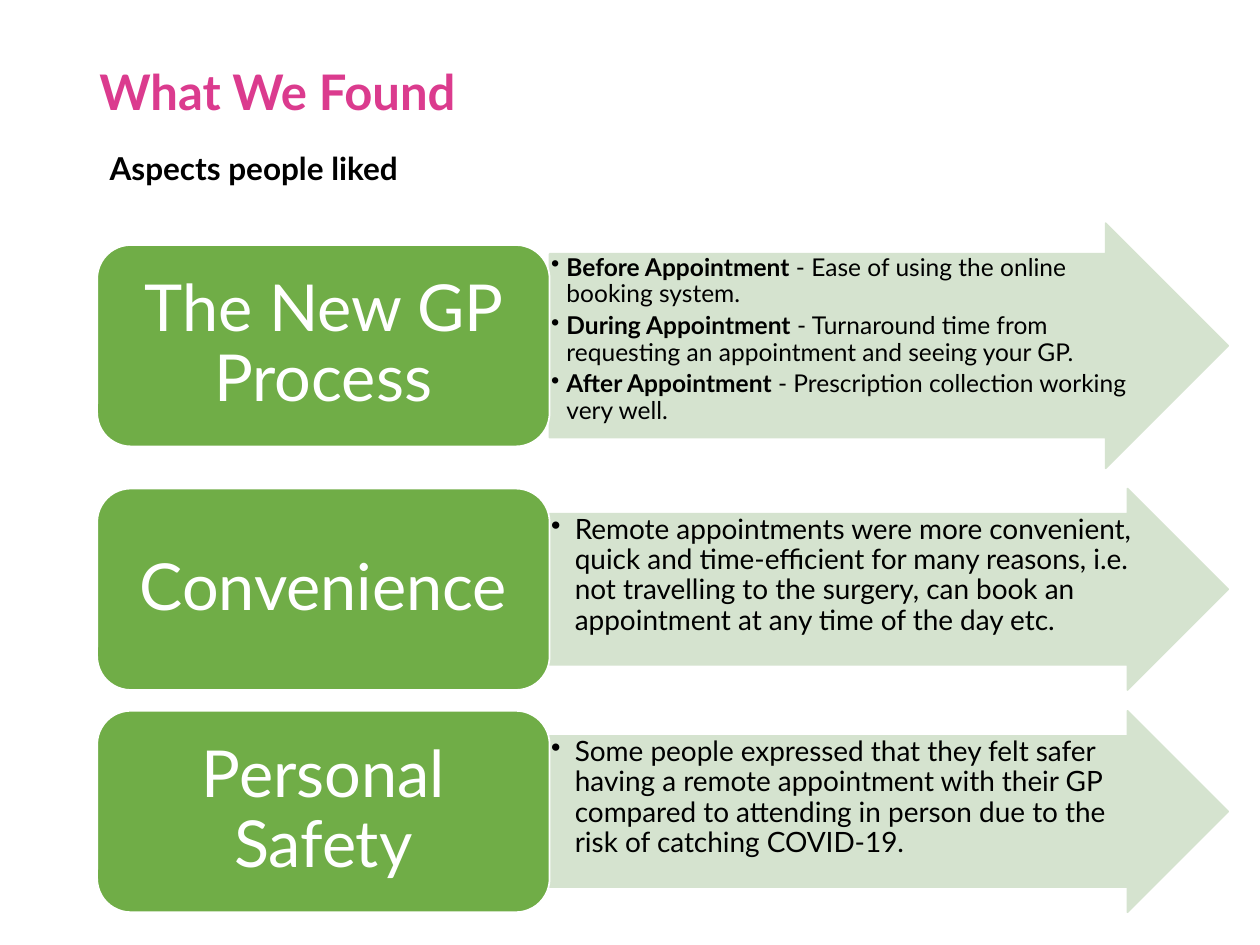
import pptx
import pptx.dml.color
import pptx.enum.shapes
import pptx.enum.text
import pptx.oxml.ns
import pptx.util
from dataclasses import dataclass
from lxml import etree

Cm = pptx.util.Cm
Pt = pptx.util.Pt
SHAPES = pptx.enum.shapes.MSO_SHAPE
ANCHOR = pptx.enum.text.MSO_ANCHOR
ALIGN = pptx.enum.text.PP_ALIGN


@dataclass(frozen=True)
class Theme:
    font: str = "Lato"
    pink: str = "DB3B8E"
    green: str = "70AD47"
    pale: str = "D5E3CF"
    white: str = "FFFFFF"
    black: str = "000000"
    title: int = 28
    subtitle: int = 18
    label: int = 37


theme = Theme()


def style(paragraph, size, color, bold=False):
    paragraph.font.name = theme.font
    paragraph.font.size = Pt(size)
    paragraph.font.bold = bold
    paragraph.font.color.rgb = pptx.dml.color.RGBColor.from_string(color)


def add_block(kind, left, top, width, height, fill, line):
    """Add a filled, outlined shape without shadow and return it."""
    shape = page.shapes.add_shape(kind, Cm(left), Cm(top), Cm(width), Cm(height))
    shape.shadow.inherit = False
    shape.fill.solid()
    shape.fill.fore_color.rgb = pptx.dml.color.RGBColor.from_string(fill)
    shape.line.color.rgb = pptx.dml.color.RGBColor.from_string(line)
    shape.line.width = Pt(1)
    shape.text_frame.word_wrap = True
    return shape


deck = pptx.Presentation()
deck.slide_width, deck.slide_height = Cm(25.4), Cm(19.05)
page = deck.slides.add_slide(deck.slide_layouts[5])

title = page.shapes.title
title.left, title.top, title.width, title.height = Cm(1.75), Cm(1.24), Cm(21.9), Cm(2.24)
title.text_frame.text = "What We Found"
title.text_frame.vertical_anchor = ANCHOR.TOP
heading = title.text_frame.paragraphs[0]
heading.alignment = ALIGN.LEFT
heading.line_spacing = 0.9
style(heading, theme.title, theme.pink, True)

subtitle = page.shapes.add_textbox(Cm(1.96), Cm(2.87), Cm(12.34), Cm(1.02))
subtitle.text_frame.word_wrap = True
subtitle.text_frame.text = "Aspects people liked"
style(subtitle.text_frame.paragraphs[0], theme.subtitle, theme.black, True)

# Label, label top, arrow height, text size, bullet indent, (bold lead, text) pairs
rows = [
    ("The New GP Process", 4.94, 4.94, 14, 0.31, [
        ("Before Appointment", " - Ease of using the online booking system."),
        ("During Appointment", " - Turnaround time from requesting an appointment and seeing your GP."),
        ("After Appointment", " - Prescription collection working very well."),
    ]),
    ("Convenience", 9.85, 4.06, 16, 0.48, [
        ("", "Remote appointments were more convenient, quick and time-efficient for many "
             "reasons, i.e. not travelling to the surgery, can book an appointment at any "
             "time of the day etc."),
    ]),
    ("Personal Safety", 14.33, 4.06, 16, 0.48, [
        ("", "Some people expressed that they felt safer having a remote appointment with "
             "their GP compared to attending in person due to the risk of catching COVID-19."),
    ]),
]
label_left, label_width, label_height = 1.96, 9.12, 4.06
arrow_left, arrow_width = label_left + label_width, 13.68

for name, top, arrow_height, size, indent, points in rows:
    arrow_top = top + (label_height - arrow_height) / 2
    arrow = add_block(SHAPES.RIGHT_ARROW, arrow_left, arrow_top, arrow_width, arrow_height,
                      theme.pale, theme.pale)
    arrow.adjustments[0] = 0.75
    arrow.adjustments[1] = 0.5
    frame = arrow.text_frame
    frame.vertical_anchor = ANCHOR.TOP
    frame.margin_left = frame.margin_right = frame.margin_top = frame.margin_bottom = Cm(0.03)
    for index, (lead, text) in enumerate(points):
        para = frame.paragraphs[0] if index == 0 else frame.add_paragraph()
        para.alignment = ALIGN.LEFT
        para.line_spacing = 0.9
        para.space_after = Pt(3)
        properties = para._p.get_or_add_pPr()
        properties.set("marL", str(Cm(indent)))
        properties.set("indent", str(-Cm(indent)))
        bullet = etree.SubElement(properties, pptx.oxml.ns.qn("a:buChar"))
        bullet.set("char", "•")
        style(para, size, theme.black)
        if lead:
            span = para.add_run()
            span.text = lead
            span.font.bold = True
        para.add_run().text = text

    label = add_block(SHAPES.ROUNDED_RECTANGLE, label_left, top, label_width, label_height,
                      theme.green, theme.white)
    frame = label.text_frame
    frame.vertical_anchor = ANCHOR.MIDDLE
    frame.margin_left = frame.margin_right = Cm(0.38)
    frame.margin_top = frame.margin_bottom = Cm(0.2)
    frame.text = name
    caption = frame.paragraphs[0]
    caption.alignment = ALIGN.CENTER
    caption.line_spacing = 0.9
    style(caption, theme.label, theme.white)

deck.save("out.pptx")
